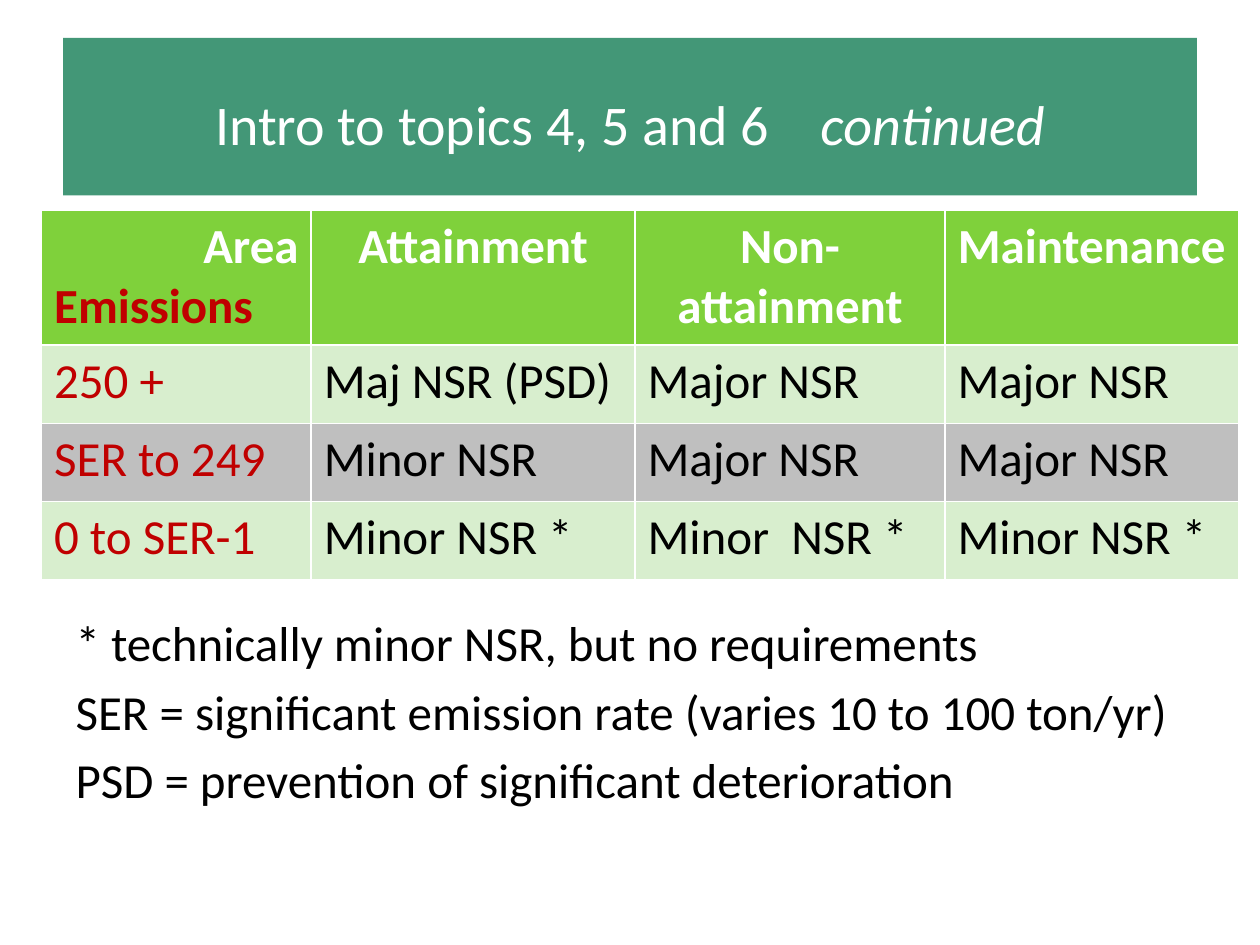
import pptx
import pptx.util
import pptx.dml.color
import pptx.enum.text
import pptx.oxml

Inches = pptx.util.Inches
Pt = pptx.util.Pt
Color = pptx.dml.color.RGBColor
Align = pptx.enum.text.PP_ALIGN

WHITE = Color(255, 255, 255)
BLACK = Color(0, 0, 0)
RED = Color(0xC0, 0, 0)
TEAL = Color(0x43, 0x97, 0x77)
GREEN = Color(0x7F, 0xD1, 0x3B)
PALE = Color(0xD8, 0xEE, 0xCE)
GREY = Color(0xBF, 0xBF, 0xBF)

HEAD = [("Intro to topics 4, 5 and 6", False, 0), (" ", False, 2170), ("continued", True, 0)]
NOTES = [
    "* technically minor NSR, but no requirements",
    "SER = significant emission rate (varies 10 to 100 ton/yr)",
    "PSD = prevention of significant deterioration",
]
ROWS = [
    ["Area\nEmissions", "Attainment", "Non-attainment", "Maintenance"],
    ["250 +", "Maj NSR (PSD)", "Major NSR", "Major NSR"],
    ["SER to 249", "Minor NSR", "Major NSR", "Major NSR"],
    ["0 to SER-1", "Minor NSR *", "Minor  NSR *", "Minor NSR *"],
]
FILLS = [GREEN, PALE, GREY, PALE]
WIDTHS = [2.14, 2.57, 2.46, 2.33]
HEIGHTS = [1.07, 0.62, 0.62, 0.62]


def place(shape, *box):
    for name, value in zip(("left", "top", "width", "height"), box):
        setattr(shape, name, Inches(value))


def style(font, color, size=28, **extra):
    font.color.rgb = color
    for name, value in {"name": "Calibri", "size": Pt(size), **extra}.items():
        setattr(font, name, value)


def paint(part, color):
    part.fill.solid()
    part.fill.fore_color.rgb = color


deck = pptx.Presentation()
deck.slide_width, deck.slide_height = Inches(10), Inches(7.5)
slide = deck.slides.add_slide(deck.slide_layouts[1])

title = slide.shapes.title
place(title, 0.5, 0.3, 9, 1.25)
paint(title, TEAL)
title.text_frame.vertical_anchor = pptx.enum.text.MSO_ANCHOR.MIDDLE
line = title.text_frame.paragraphs[0]
for name, value in {"alignment": Align.CENTER, "line_spacing": 1.2, "space_after": Pt(6)}.items():
    setattr(line, name, value)
for text, slant, gap in HEAD:
    run = line.add_run()
    run.text = text
    style(run.font, WHITE, 32, italic=slant)
    if gap:
        run._r.get_or_add_rPr().set("spc", str(gap))

body = slide.placeholders[1]
place(body, 0.5, 4.81, 9, 1.89)
body.text_frame.text = "\n".join(NOTES)
for line in body.text_frame.paragraphs:
    style(line.runs[0].font, BLACK)
    props = line._p.get_or_add_pPr()
    props.append(pptx.oxml.parse_xml(
        '<a:buNone xmlns:a="http://schemas.openxmlformats.org/drawingml/2006/main"/>'))

frame = slide.shapes.add_table(
    len(ROWS), len(WIDTHS), Inches(0.33), Inches(1.67),
    Inches(sum(WIDTHS)), Inches(sum(HEIGHTS)))
table = frame.table
for col, width in zip(table.columns, WIDTHS):
    col.width = Inches(width)
for row, height in zip(table.rows, HEIGHTS):
    row.height = Inches(height)
for r, texts in enumerate(ROWS):
    for c, text in enumerate(texts):
        cell = table.cell(r, c)
        cell.text = text
        paint(cell, FILLS[r])
        for line in cell.text_frame.paragraphs:
            color = WHITE if r == 0 else RED if c == 0 else BLACK
            style(line.runs[0].font, color, bold=r == 0)
            line.alignment = Align.CENTER if r == 0 else Align.LEFT

area, mass = table.cell(0, 0).text_frame.paragraphs
area.alignment, mass.alignment = Align.RIGHT, Align.LEFT
mass.runs[0].font.color.rgb = RED

deck.save("out.pptx")
